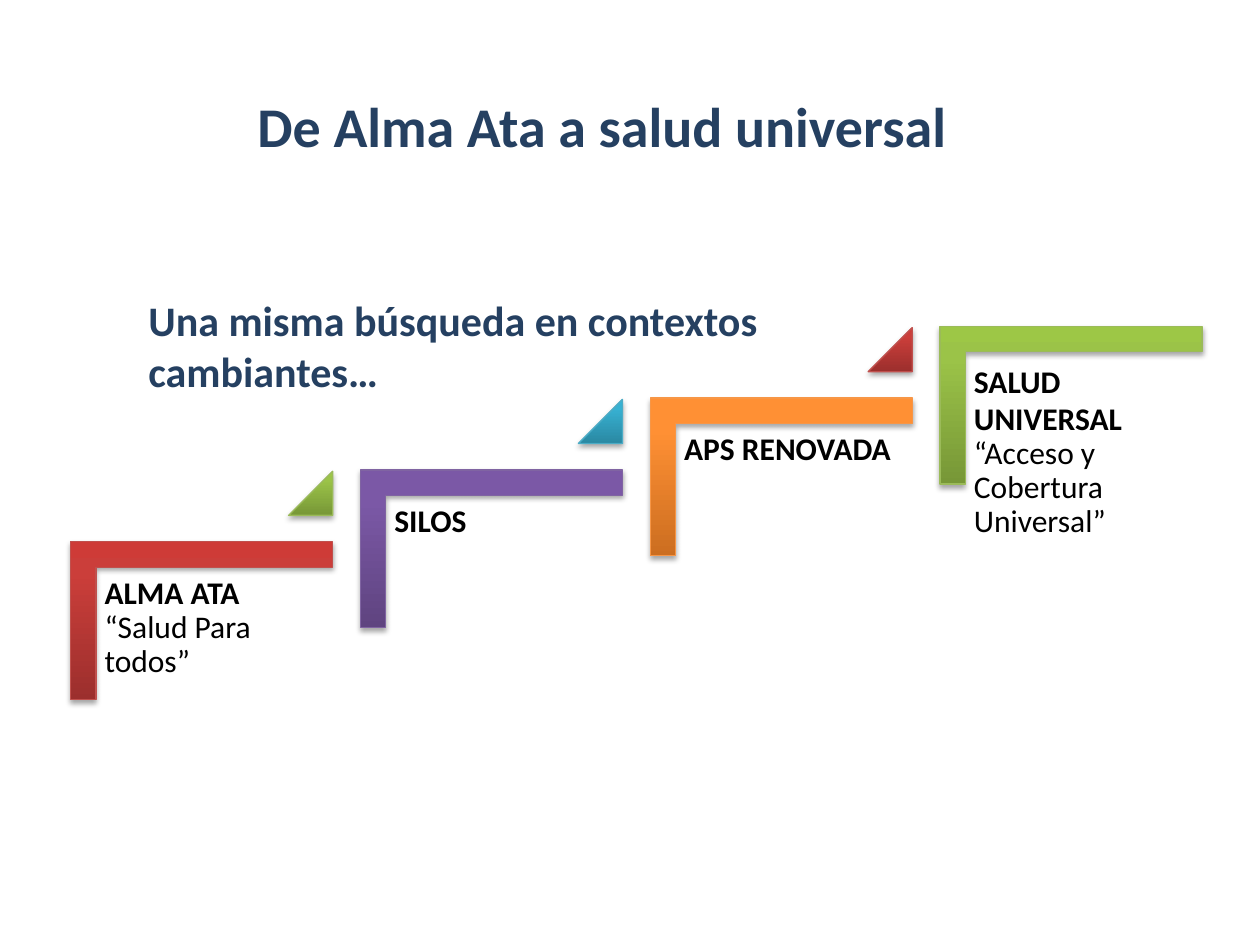
from copy import deepcopy

from lxml.etree import SubElement
from pptx import Presentation
from pptx.dml.color import RGBColor
from pptx.enum.shapes import MSO_SHAPE
from pptx.enum.text import MSO_ANCHOR, PP_ALIGN
from pptx.oxml.ns import qn
from pptx.util import Inches, Pt

NAVY = "254061"
RED = ("9C2F2D", "CB3E3A", "CE3B37", "C0504D")
PURPLE = ("5F4480", "7B58A6", "7C57A8", "8064A2")
ORANGE = ("CC6E20", "FF9034", "FF9136", "F79646")
GREEN = ("779737", "9BC348", "9DC746", "9BBB59")
TEAL = ("2A88A2", "37B1D2", "34B4D6", "4BACC6")

STEPS = [
    (RED, GREEN, [[("ALMA ATA ", True), ("“Salud Para todos”", False)]]),
    (PURPLE, TEAL, [[("SILOS", True)]]),
    (ORANGE, RED, [[("APS RENOVADA", True)]]),
    (GREEN, None, [[("SALUD UNIVERSAL", True)],
                   [("“Acceso y Cobertura Universal”", False)]]),
]


def rgb(value):
    return RGBColor.from_string(value)


def set_all(obj, values):
    for name, value in values.items():
        setattr(obj, name, value)


def add_run(p, text, size, color, bold):
    r = p.add_run()
    r.text = text
    set_all(r.font, {"name": "Calibri", "size": Pt(size), "bold": bold})
    r.font.color.rgb = rgb(color)


def add_shadow(s):
    s.shadow.inherit = False
    effects = s._element.spPr.find(qn("a:effectLst"))
    shadow = SubElement(effects, qn("a:outerShdw"), blurRad="40000",
                        dist="23000", dir="5400000", rotWithShape="0")
    black = SubElement(shadow, qn("a:srgbClr"), val="000000")
    SubElement(black, qn("a:alpha"), val="35000")


def add_gradient_shape(slide, kind, x, y, w, h, adjustments, colors):
    s = slide.shapes.add_shape(kind, Inches(x), Inches(y), Inches(w), Inches(h))
    for i, value in enumerate(adjustments):
        s.adjustments[i] = value
    s.fill.gradient()
    s.fill.gradient_angle = 90
    grad = s._element.spPr.find(qn("a:gradFill"))
    grad.set("rotWithShape", "0")
    stops = grad.find(qn("a:gsLst"))
    stops.append(deepcopy(stops[-1]))
    for stop, position, color in zip(s.fill.gradient_stops, (0, 0.8, 1), colors):
        stop.position = position
        stop.color.rgb = rgb(color)
    s.line.color.rgb = rgb(colors[-1])
    s.line.width = Pt(0.75)
    add_shadow(s)
    return s


def add_title(slide, x, y, w, h):
    title = slide.shapes.title
    set_all(title, {"left": Inches(x), "top": Inches(y),
                    "width": Inches(w), "height": Inches(h)})
    tf = title.text_frame
    set_all(tf, {"word_wrap": False, "vertical_anchor": MSO_ANCHOR.TOP})
    p = tf.paragraphs[0]
    p.alignment = PP_ALIGN.CENTER
    add_run(p, "De Alma Ata a salud universal", 32, NAVY, True)


def add_subtitle(slide, x, y, w, h):
    box = slide.shapes.add_textbox(Inches(x), Inches(y), Inches(w), Inches(h))
    tf = box.text_frame
    tf.word_wrap = True
    add_run(tf.paragraphs[0], "Una misma búsqueda en contextos cambiantes…",
            24, NAVY, True)


def add_step(slide, x, y, w, h, colors, marker, paragraphs):
    corner = add_gradient_shape(slide, MSO_SHAPE.CORNER, x + (w - h) / 2,
                                y + (h - w) / 2, h, w, (0.161, 0.161), colors)
    corner.rotation = 90

    box = slide.shapes.add_textbox(Inches(x + 0.2), Inches(y + 0.21),
                                   Inches(1.88), Inches(1.65))
    tf = box.text_frame
    margin = Inches(0.07)
    set_all(tf, {"word_wrap": True, "margin_left": margin, "margin_top": margin,
                 "margin_right": margin, "margin_bottom": margin})
    for i, runs in enumerate(paragraphs):
        p = tf.add_paragraph() if i else tf.paragraphs[0]
        if i == len(paragraphs) - 1:
            set_all(p, {"line_spacing": 0.9, "space_after": Pt(6)})
        for text, bold in runs:
            add_run(p, text, 18, "000000", bold)

    if marker:
        size = 0.35
        add_gradient_shape(slide, MSO_SHAPE.ISOSCELES_TRIANGLE, x + w - size,
                           y - 0.56, size, size, (1,), marker)


def add_staircase(slide, x, y, pitch, rise):
    for i, (colors, marker, paragraphs) in enumerate(STEPS):
        add_step(slide, x + i * pitch, y - i * rise, 2.08, 1.25,
                 colors, marker, paragraphs)


def main():
    prs = Presentation()
    set_all(prs, {"slide_width": Inches(10), "slide_height": Inches(7.5)})
    slide = prs.slides.add_slide(prs.slide_layouts[5])
    add_title(slide, 1.92, 0.68, 5.72, 0.64)
    add_staircase(slide, 0.56, 4.3, 2.3, 0.57)
    add_subtitle(slide, 1.08, 2.29, 5.66, 0.91)
    prs.save("out.pptx")


if __name__ == "__main__":
    main()
